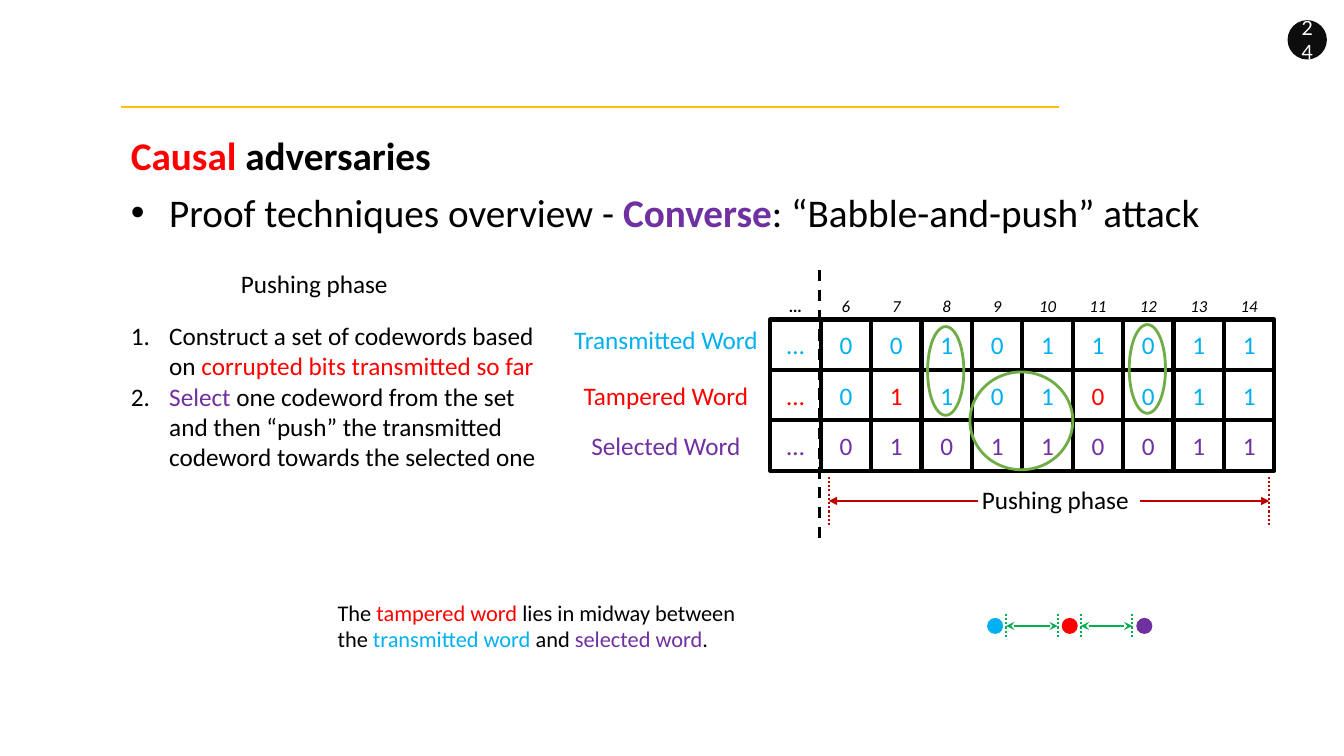
from lxml.etree import SubElement
from pptx import Presentation
from pptx.dml.color import RGBColor as RGB
from pptx.enum.dml import MSO_LINE as Dash
from pptx.enum.shapes import MSO_CONNECTOR as Connector, MSO_SHAPE as Shape
from pptx.enum.text import MSO_ANCHOR as Anchor, MSO_AUTO_SIZE as AutoSize, PP_ALIGN as Align
from pptx.oxml.ns import qn
from pptx.util import Inches, Pt

COLORS = {
    "black": "000000", "white": "FFFFFF", "badge": "0D0D0D", "rule": "FFC000",
    "sent": "00B0F0", "tampered": "FF0000", "selected": "7030A0",
    "ring": "70AD47", "phase": "C00000", "distance": "00B050",
}
CELL = 0.5
INDENT = 0.38
POSITIONS = ["…", *range(6, 15)]
WORDS = [
    ("Transmitted Word", "sent", "…001011011"),
    ("Tampered Word", "tampered", "…011010011"),
    ("Selected Word", "selected", "…010110011"),
]


def color(name):
    return RGB.from_string(COLORS[name])


def write(frame, paragraphs, size, align=Align.LEFT, anchor=Anchor.TOP, font="Calibri",
          inset=None, wrap=True, bullet=None, bold=False, italic=False):
    """Fill a frame; every paragraph is a list of (text, colour[, bold]) runs."""
    frame.word_wrap, frame.vertical_anchor = wrap, anchor
    if inset is not None:
        frame.margin_left = frame.margin_right = Inches(inset)
        frame.margin_top = frame.margin_bottom = Inches(inset)
    for index, runs in enumerate(paragraphs):
        paragraph = frame.add_paragraph() if index else frame.paragraphs[0]
        paragraph.alignment = align
        if bullet:
            add_bullet(paragraph, bullet)
        style = paragraph.font
        style.name, style.size = font, Pt(size)
        style.bold, style.italic = bold, italic
        style.color.rgb = color(runs[0][1])
        for text, tint, *strong in runs:
            run = paragraph.add_run()
            run.text = text
            if tint != runs[0][1]:
                run.font.color.rgb = color(tint)
            if strong:
                run.font.bold = strong[0]


def add_bullet(paragraph, bullet):
    props = paragraph._p.get_or_add_pPr()
    props.set("marL", str(Inches(INDENT)))
    props.set("indent", str(-Inches(INDENT)))
    tint = SubElement(props, qn("a:buClr"))
    SubElement(tint, qn("a:srgbClr"), val=COLORS["black"])
    if bullet == "number":
        SubElement(props, qn("a:buFont"), typeface="+mj-lt")
        SubElement(props, qn("a:buAutoNum"), type="arabicPeriod")
    else:
        SubElement(props, qn("a:buFont"), typeface="Arial")
        SubElement(props, qn("a:buChar"), char=bullet)


def add_text(slide, box, paragraphs, size, grow=True, **style):
    frame = slide.shapes.add_textbox(*map(Inches, box)).text_frame
    write(frame, paragraphs, size, **style)
    if grow:
        frame.auto_size = AutoSize.SHAPE_TO_FIT_TEXT


def add_figure(slide, kind, box, fill=None, outline=None, width=1):
    figure = slide.shapes.add_shape(kind, *map(Inches, box))
    figure.shadow.inherit = False
    if fill:
        figure.fill.solid()
        figure.fill.fore_color.rgb = color(fill)
    else:
        figure.fill.background()
    if outline:
        figure.line.color.rgb = color(outline)
        figure.line.width = Pt(width)
    else:
        figure.line.fill.background()
    return figure


def add_line(slide, start, end, tint, width, dash=None, head=None, tail=None):
    line = slide.shapes.add_connector(Connector.STRAIGHT, *map(Inches, (*start, *end)))
    line.line.color.rgb = color(tint)
    line.line.width = Pt(width)
    if dash:
        line.line.dash_style = dash
    stroke = line.line._get_or_add_ln()
    for tag, arrow in (("a:headEnd", head), ("a:tailEnd", tail)):
        if arrow:
            SubElement(stroke, qn(tag), type=arrow)
    SubElement(line._element.spPr, qn("a:effectLst"))


def draw_header(slide, left, top):
    add_line(slide, (left, top), (left + 9.3, top), "rule", 1)
    badge = add_figure(slide, Shape.OVAL, (12.77, 0.2, 0.39, 0.39), fill="badge")
    write(badge.text_frame, [[("24", "white")]], 14, align=Align.CENTER,
          anchor=Anchor.MIDDLE, font="Lato", inset=0.04)
    add_text(slide, (left, top + 0.19, 3.32, 0.57),
             [[("Causal ", "tampered"), ("adversaries", "black")]], 28, wrap=False, bold=True)
    add_text(slide, (left, top + 0.76, 10.9, 0.57),
             [[("Proof techniques overview - ", "black"), ("Converse", "selected", True),
               (": “Babble-and-push” attack", "black")]], 28, wrap=False, bullet="•")


def draw_steps(slide, left, top):
    add_text(slide, (left + 1.09, top, 1.77, 0.4), [[("Pushing phase", "black")]], 18)
    add_text(slide, (left, top + 0.52, 4.25, 1.62), [
        [("Construct a set of codewords based on ", "black"),
         ("corrupted bits transmitted so far", "tampered")],
        [("Select", "selected"),
         (" one codeword from the set and then “push” the transmitted codeword"
          " towards the selected one", "black")],
    ], 18, bullet="number")


def draw_words(slide, left, top):
    centred = dict(align=Align.CENTER, inset=0.04, wrap=False)
    # Bit positions above the grid
    for column, position in enumerate(POSITIONS):
        add_text(slide, (left + column * CELL, top - CELL, CELL, CELL),
                 [[(str(position), "black")]], 12, grow=False, anchor=Anchor.BOTTOM,
                 italic=True, bold=position == "…", **centred)
    # One row per word; tampered bits are those that differ from the sent word
    sent_bits = WORDS[0][2]
    for row, ((label, tint, bits), label_top) in enumerate(zip(WORDS, (0, 0.55, 1.05))):
        add_text(slide, (left - 2.17, top + label_top, 2.27, 0.4), [[(label, tint)]], 18,
                 align=Align.CENTER)
        for column, (bit, sent) in enumerate(zip(bits, sent_bits)):
            kept = tint == "tampered" and bit == sent and bit != "…"
            cell = add_figure(slide, Shape.RECTANGLE,
                              (left + column * CELL, top + row * CELL, CELL, CELL),
                              outline="black", width=3)
            write(cell.text_frame, [[(bit, "sent" if kept else tint)]], 18,
                  anchor=Anchor.MIDDLE, **centred)
    # Start of the pushing phase
    start = left + CELL - 0.01
    add_line(slide, (start, top - 0.49), (start, top + 2.23), "black", 2, Dash.DASH)
    # Rings around the compared bits
    for x, y, width, height in ((1.56, 0.07, 0.36, 0.88), (3.56, 0.05, 0.36, 0.88),
                                (1.98, 0.52, 1.02, 0.97)):
        add_figure(slide, Shape.OVAL, (left + x, top + y, width, height),
                   outline="ring", width=2)


def draw_phase_span(slide, left, top, width):
    add_text(slide, (left + 1.42, top + 0.03, 1.77, 0.4), [[("Pushing phase", "black")]], 18)
    middle = top + 0.24
    for inner, edge in ((left + 1.48, left), (left + 3.09, left + width)):
        add_line(slide, (inner, middle), (edge, middle), "phase", 1.5, tail="triangle")
        add_line(slide, (edge, top), (edge, top + 0.48), "phase", 1.5, Dash.ROUND_DOT)


def draw_midway(slide, left, top):
    add_text(slide, (left, top, 4.26, 0.64), [[
        ("The ", "black"), ("tampered word", "tampered"),
        (" lies in midway between the ", "black"), ("transmitted word ", "sent"),
        ("and ", "black"), ("selected word", "selected"), (".", "black")]], 16)
    # Three words as dots, with equal distances between them
    first, step, dot, middle = left + 6.54, 0.74, 0.16, top + 0.32
    for index, tint in enumerate(("sent", "tampered", "selected")):
        add_figure(slide, Shape.OVAL, (first + index * step, middle - dot / 2, dot, dot),
                   fill=tint)
    for index in range(2):
        start = first + 0.19 + index * step
        end = start + 0.51
        add_line(slide, (start, middle), (end, middle), "distance", 1.5,
                 head="stealth", tail="stealth")
        for x in (start, end):
            add_line(slide, (x, middle - 0.12), (x, middle + 0.12), "distance", 1.5,
                     Dash.ROUND_DOT)


def main():
    deck = Presentation()
    deck.slide_width, deck.slide_height = Inches(13.33), Inches(7.5)
    slide = deck.slides.add_slide(deck.slide_layouts[6])
    draw_header(slide, 1.2, 1.06)
    draw_steps(slide, 1.2, 2.61)
    draw_words(slide, 7.64, 3.17)
    draw_phase_span(slide, 8.22, 4.73, 4.37)
    draw_midway(slide, 3.25, 5.89)
    deck.save("out.pptx")


if __name__ == "__main__":
    main()
